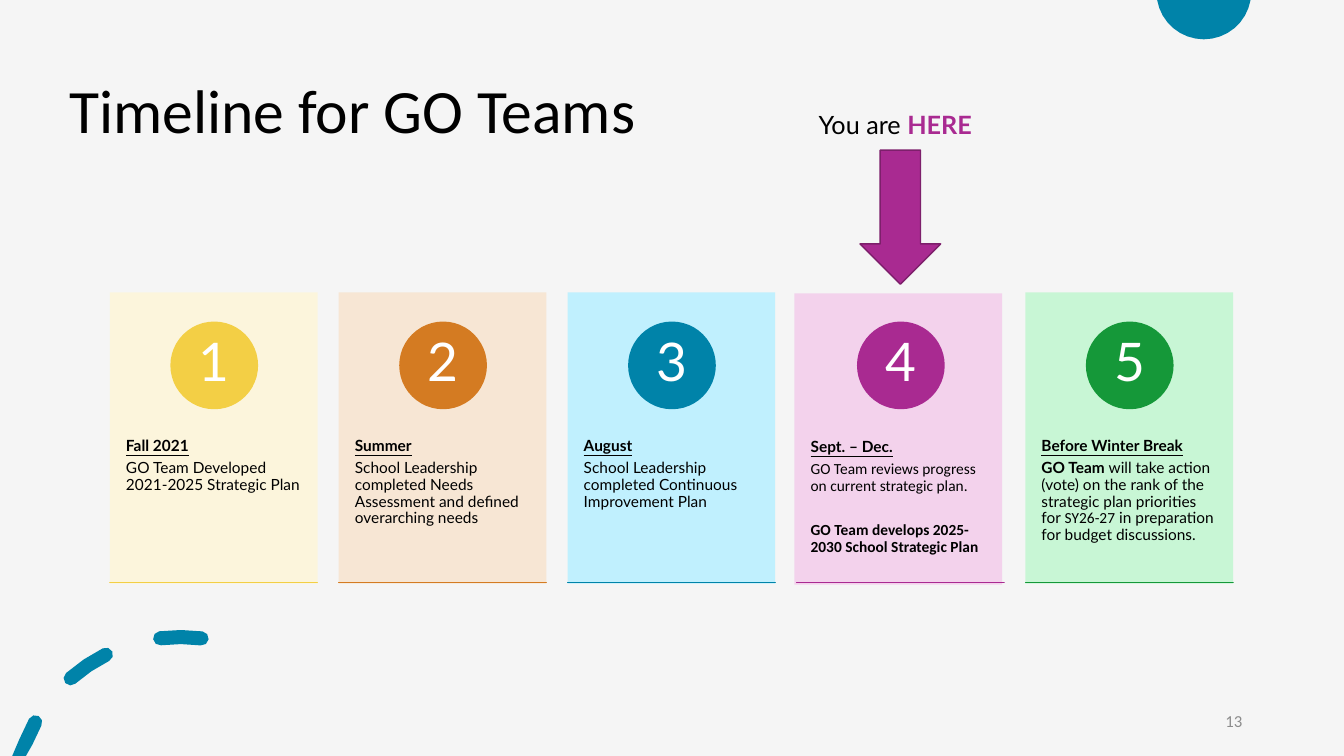
import math

import pptx
import pptx.dml.color
import pptx.enum.text
import pptx.enum.shapes
import pptx.oxml
import pptx.oxml.ns
import pptx.util

Inches = pptx.util.Inches
Pt = pptx.util.Pt
SHAPE = pptx.enum.shapes.MSO_SHAPE
ALIGN = pptx.enum.text.PP_ALIGN
ANCHOR = pptx.enum.text.MSO_ANCHOR
FIT = pptx.enum.text.MSO_AUTO_SIZE

WIDTH, HEIGHT = 13.33, 7.5
COLORS = {
    "page": "F5F5F5", "ink": "000000", "white": "FFFFFF", "muted": "8C8C8C",
    "yellow": "F3CF45", "orange": "D47B22", "blue": "0083A9",
    "purple": "A92A91", "green": "159839", "purple edge": "7D1F6B",
    "yellow tint": "FDF5DA", "orange tint": "F8E5D1", "blue tint": "BBF0FF",
    "purple tint": "F3CFEC", "green tint": "C4F7D2",
}
CARD_LEFT, CARD_TOP, CARD_WIDTH, CARD_HEIGHT, CARD_PITCH = 1.09, 2.9, 2.06, 2.89, 2.27
DISC = 0.87

HEADING = {"bold": True, "underline": True}
BOLD = {"bold": True}
CALIBRI = {"font": "Calibri"}
CARDS = [
    ("yellow", (0, 0), [[("Fall 2021", HEADING)],
                        [("GO Team Developed 2021-2025 Strategic Plan", {})]]),
    ("orange", (0, 0), [[("Summer", HEADING)],
                        [("School Leadership completed Needs Assessment and defined "
                          "overarching needs", {})]]),
    ("blue", (0, 0), [[("August", HEADING)],
                      [("School Leadership completed Continuous Improvement Plan", {})]]),
    ("purple", (-0.02, 0.01), [
        [("Sept. – Dec.", HEADING)],
        [("GO Team reviews progress on current strategic plan.", CALIBRI)],
        [("GO Team develops 2025-2030 School Strategic Plan", {**CALIBRI, **BOLD})]]),
    ("green", (0, 0), [
        [("Before Winter Break", HEADING)],
        [("GO Team ", BOLD),
         ("will take action (vote) on the rank of the strategic plan priorities for ", {}),
         ("SY26-27", CALIBRI),
         (" in preparation for budget discussions.", {})]]),
]


def rgb(name):
    """Return the named colour."""
    return pptx.dml.color.RGBColor.from_string(COLORS[name])


def paint(shape, color, edge=None):
    """Give a shape a flat fill and an optional thin outline."""
    shape.shadow.inherit = False
    shape.fill.solid()
    shape.fill.fore_color.rgb = rgb(color)
    if edge:
        shape.line.color.rgb = rgb(edge)
        shape.line.width = Pt(1)
    else:
        shape.line.fill.background()
    return shape


def add_shape(page, kind, box, color, edge=None):
    """Add a painted preset shape in a box given in inches."""
    return paint(page.shapes.add_shape(kind, *map(Inches, box)), color, edge)


def add_text(page, box, paragraphs, size, font="Lato", color="ink", align=ALIGN.LEFT,
             anchor=ANCHOR.TOP, insets=(0.1, 0.05), spacing=None, after=0):
    """Add a wrapped text box made of paragraphs of styled spans."""
    frame = page.shapes.add_textbox(*map(Inches, box)).text_frame
    frame.auto_size = FIT.NONE
    frame.word_wrap = True
    frame.vertical_anchor = anchor
    frame.margin_left = frame.margin_right = Inches(insets[0])
    frame.margin_top = frame.margin_bottom = Inches(insets[1])
    for index, spans in enumerate(paragraphs):
        para = frame.add_paragraph() if index else frame.paragraphs[0]
        para.alignment = align
        para.line_spacing = spacing
        para.space_after = Pt(after)
        for words, style in spans:
            span = para.add_run()
            span.text = words
            span.font.size = Pt(size)
            span.font.name = style.get("font", font)
            span.font.bold = style.get("bold", False)
            span.font.underline = style.get("underline", False)
            span.font.color.rgb = rgb(style.get("color", color))
    return frame


def add_outline(page, contours, color):
    """Add one painted shape of closed contours, trimmed to the slide's height."""
    builder = None
    for contour in contours:
        points = [(Inches(x), Inches(min(max(y, 0), HEIGHT))) for x, y in contour]
        if builder:
            builder.move_to(*points[0])
        else:
            builder = page.shapes.build_freeform(*points[0])
        builder.add_line_segments(points[1:], close=True)
    paint(builder.convert_to_shape(), color)


def arc(center, radius, start, end, steps=4):
    """Return points on an arc, with angles in degrees clockwise from the top."""
    angles = [math.radians(start + (end - start) * step / steps) for step in range(steps + 1)]
    return [(center[0] + radius * math.sin(angle), center[1] - radius * math.cos(angle))
            for angle in angles]


def dash(center, radius, half, start, end):
    """Return the contour of a round-ended dash on a ring."""
    first, last = (arc(center, radius, angle, angle, 1)[0] for angle in (start, end))
    return (arc(center, radius + half, start, end, 2)
            + arc(last, half, end, end + 180)[1:]
            + arc(center, radius - half, end, start, 2)[1:]
            + arc(first, half, start + 180, start + 360)[1:-1])


def add_decor(page):
    """Draw the half disc at the top and the dashed ring at the lower left."""
    add_outline(page, [arc((11.94, -0.08), 0.47, 99.8, 260.2, 16)], "blue")
    spans = [(-76, -60.8), (-41.3, -26.6), (-7, 7.3)]
    add_outline(page, [dash((1.79, 7.97), 1.65, 0.07, *span) for span in spans], "blue")


def add_card(page, left, top, number, color, nudge, paragraphs):
    """Draw one timeline card with its numbered disc, text and base line."""
    x, y = left + nudge[0], top + nudge[1]
    panel = add_shape(page, SHAPE.RECTANGLE, (x, y, CARD_WIDTH, CARD_HEIGHT), color + " tint")
    tint = panel.fill._xPr.find(".//" + pptx.oxml.ns.qn("a:srgbClr"))
    tint.append(pptx.oxml.parse_xml(
        "<a:alpha %s val='90000'/>" % pptx.oxml.ns.nsdecls("a")))
    frame = add_text(page, (x, y + 1.09, CARD_WIDTH, 1.73), paragraphs, 11,
                     insets=(0.16, 0.36), spacing=0.9, after=3.85)
    for para in frame.paragraphs[2:]:
        para.space_before = Pt(16)
    disc_left, disc_top = left + 0.6, top + 0.29
    add_shape(page, SHAPE.OVAL, (disc_left, disc_top, DISC, DISC), color)
    add_text(page, (disc_left + 0.13, disc_top + 0.12, 0.61, 0.61), [[(str(number), {})]], 38,
             color="white", align=ALIGN.CENTER, anchor=ANCHOR.MIDDLE,
             insets=(0.07, 0.01), spacing=0.9)
    add_shape(page, SHAPE.RECTANGLE, (left, top + CARD_HEIGHT - 0.01, CARD_WIDTH, 0),
              color, color)


def add_marker(page, left, top):
    """Draw the label and arrow that point at the current step."""
    add_shape(page, SHAPE.DOWN_ARROW, (left + 0.51, top + 0.45, 0.8, 1.33),
              "purple", "purple edge")
    label = add_text(page, (left, top, 1.82, 0.4),
                     [[("You are ", {}), ("HERE", {"bold": True, "color": "purple"})]], 18)
    label.auto_size = FIT.SHAPE_TO_FIT_TEXT


def main():
    """Build and save the timeline slide."""
    deck = pptx.Presentation()
    deck.slide_width, deck.slide_height = Inches(WIDTH), Inches(HEIGHT)
    page = deck.slides.add_slide(deck.slide_layouts[6])
    page.background.fill.solid()
    page.background.fill.fore_color.rgb = rgb("page")
    add_decor(page)
    add_text(page, (0.59, 0.4, 11.5, 1.45), [[("Timeline for GO Teams", {})]], 44,
             font="Calibri", anchor=ANCHOR.MIDDLE, spacing=0.9)
    for index, (color, nudge, paragraphs) in enumerate(CARDS):
        add_card(page, CARD_LEFT + index * CARD_PITCH, CARD_TOP, index + 1,
                 color, nudge, paragraphs)
    add_text(page, (9.42, 6.95, 3, 0.4), [[("13", {})]], 12, font="Calibri",
             color="muted", align=ALIGN.RIGHT, anchor=ANCHOR.MIDDLE)
    add_marker(page, 8.02, 1.04)
    deck.save("out.pptx")


if __name__ == "__main__":
    main()
